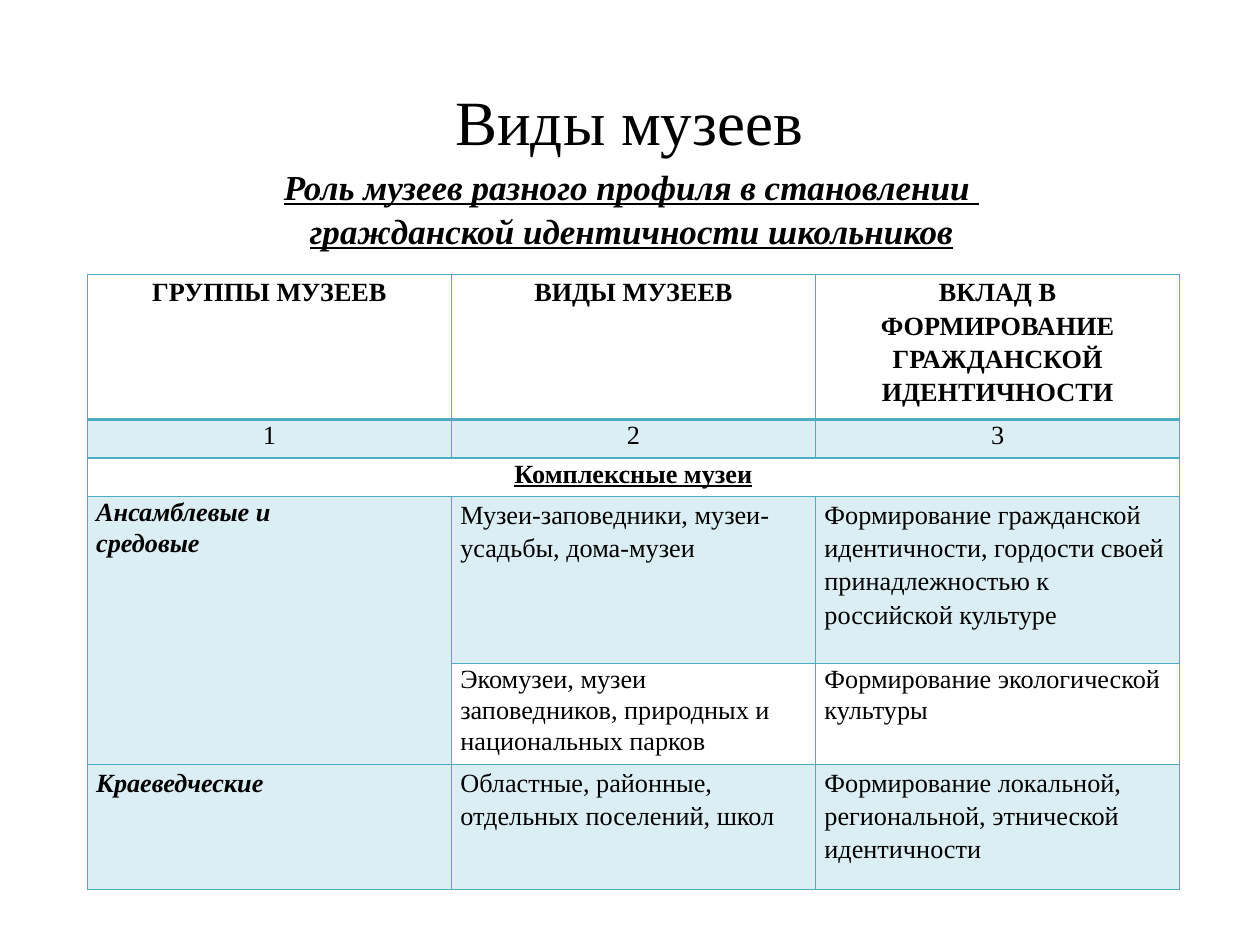
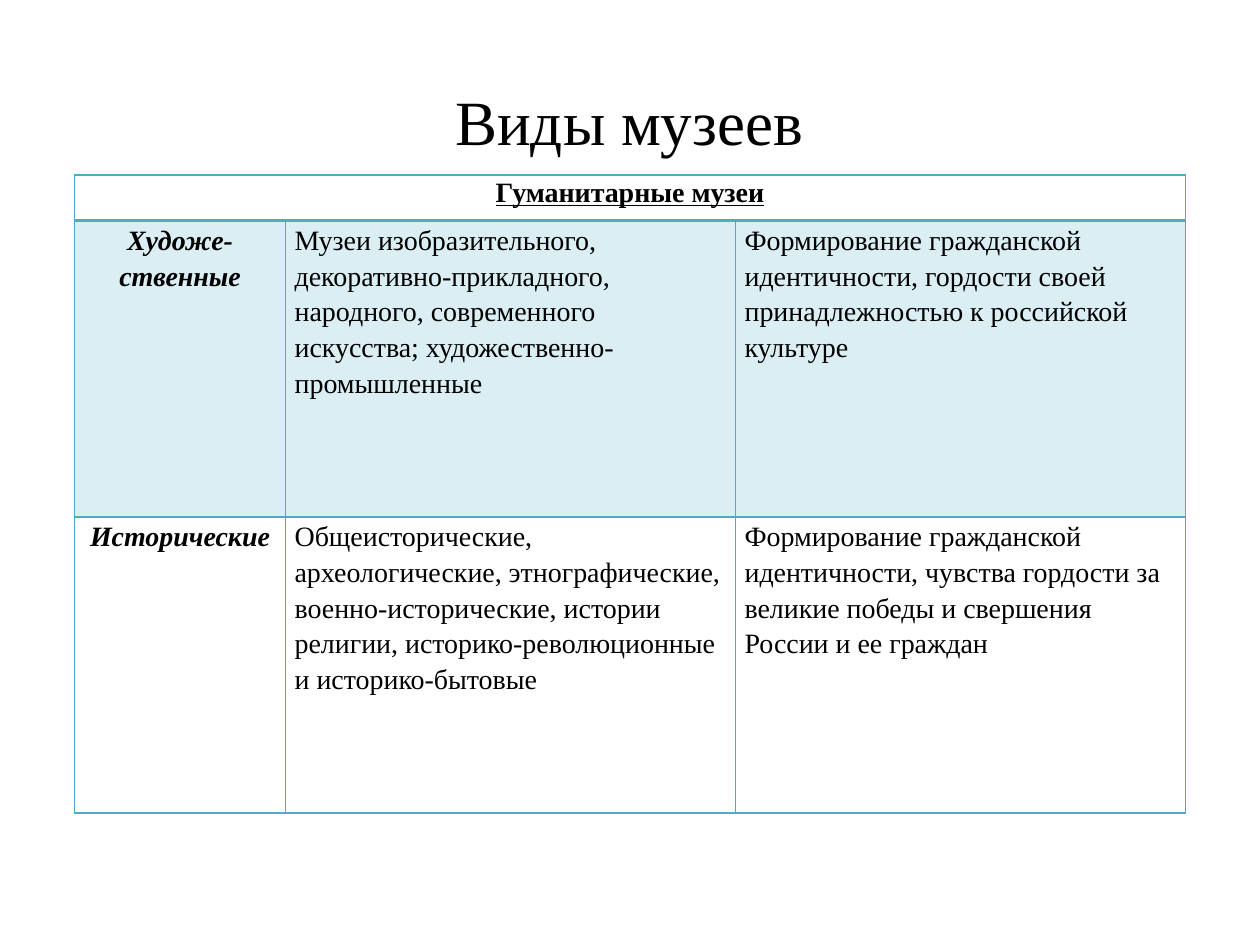
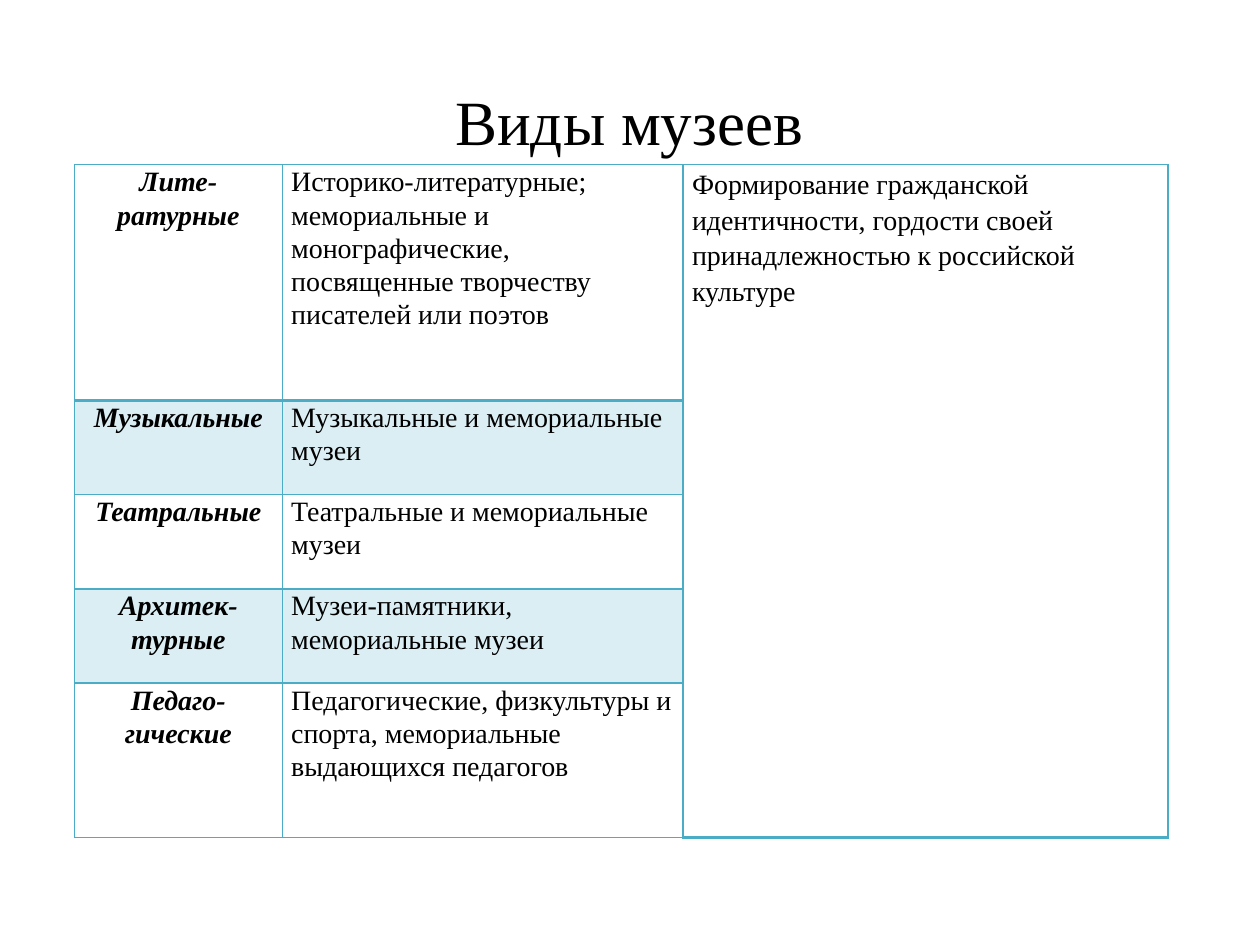
from itertools import product

from lxml import etree
from pptx import Presentation
from pptx import util as u
from pptx.dml.color import RGBColor
from pptx.enum import text
from pptx.oxml import ns

COLORS = {"ink": "000000", "grid": "4BACC6", "band": "DBEEF4"}
FONT = "Times New Roman"
ALIGN = text.PP_ALIGN
TIGHT, LOOSE = 1.07, 1.15

# Role of a cell: alignment and font attributes
ROLES = {
    "header": (ALIGN.CENTER, {"bold": True}),
    "number": (ALIGN.CENTER, {}),
    "section": (ALIGN.CENTER, {"bold": True, "underline": True}),
    "group": (ALIGN.CENTER, {"bold": True, "italic": True}),
    "group_left": (ALIGN.JUSTIFY, {"bold": True, "italic": True}),
    "body": (ALIGN.LEFT, {}),
}

PRIDE = ("Формирование гражданской идентичности, гордости своей "
         "принадлежностью к российской культуре")

# Each row: height in cm, then cells as (text, role, line spacing);
# None stands for a cell covered by a merged neighbour.
SLIDES = [
    {
        "subtitle": "Роль музеев разного профиля в становлении \n"
                    "гражданской идентичности школьников",
        "left": 1.76, "top": 5.53, "columns": [7.34, 7.34, 7.34], "size": 15,
        "merges": [(2, 0, 2, 2), (3, 0, 4, 0)],
        "rows": [
            (2.92, [("ГРУППЫ МУЗЕЕВ", "header", LOOSE),
                    ("ВИДЫ МУЗЕЕВ", "header", LOOSE),
                    ("ВКЛАД В ФОРМИРОВАНИЕ ГРАЖДАНСКОЙ ИДЕНТИЧНОСТИ", "header", LOOSE)]),
            (0.78, [(number, "number", TIGHT) for number in "123"]),
            (0.78, [("Комплексные музеи", "section", TIGHT), None, None]),
            (3.36, [("Ансамблевые и\nсредовые", "group_left", TIGHT),
                    ("Музеи-заповедники, музеи-усадьбы, дома-музеи", "body", LOOSE),
                    (PRIDE, "body", LOOSE)]),
            (2.03, [None,
                    ("Экомузеи, музеи заповедников, природных и национальных парков",
                     "body", TIGHT),
                    ("Формирование экологической культуры", "body", TIGHT)]),
            (2.52, [("Краеведческие", "group_left", LOOSE),
                    ("Областные, районные, отдельных поселений, школ", "body", LOOSE),
                    ("Формирование локальной, региональной, этнической идентичности",
                     "body", LOOSE)]),
        ],
    },
    {
        "left": 1.5, "top": 3.53, "columns": [4.26, 9.07, 9.07], "size": 16,
        "merges": [(0, 0, 0, 2)],
        "rows": [
            (0.92, [("Гуманитарные музеи", "section", TIGHT), None, None]),
            (5.97, [("Художе-ственные", "group", LOOSE),
                    ("Музеи изобразительного, декоративно-прикладного, народного, "
                     "современного искусства; художественно-промышленные", "body", LOOSE),
                    (PRIDE, "body", LOOSE)]),
            (5.97, [("Исторические", "group", LOOSE),
                    ("Общеисторические, археологические, этнографические, "
                     "военно-исторические, истории религии, историко-революционные "
                     "и историко-бытовые", "body", LOOSE),
                    ("Формирование гражданской идентичности, чувства гордости за "
                     "великие победы и свершения России и ее граждан", "body", LOOSE)]),
        ],
    },
    {
        "left": 1.5, "top": 3.32, "columns": [4.19, 8.08, 9.78], "size": 16,
        "merges": [(0, 2, 4, 2)],
        "rows": [
            (4.75, [("Лите-ратурные", "group", TIGHT),
                    ("Историко-литературные; мемориальные и монографические, "
                     "посвященные творчеству писателей или поэтов", "body", TIGHT),
                    (PRIDE, "body", LOOSE)]),
            (1.9, [("Музыкальные", "group", TIGHT),
                   ("Музыкальные и мемориальные музеи", "body", TIGHT), None]),
            (1.9, [("Театральные", "group", TIGHT),
                   ("Театральные и мемориальные музеи", "body", TIGHT), None]),
            (1.9, [("Архитек-турные", "group", TIGHT),
                   ("Музеи-памятники, мемориальные музеи", "body", TIGHT), None]),
            (2.88, [("Педаго-гические", "group", TIGHT),
                    ("Педагогические, физкультуры и спорта, мемориальные "
                     "выдающихся педагогов", "body", TIGHT), None]),
        ],
    },
]


def write(frame, words, size, align, spacing, **font):
    """Fill a text frame, one paragraph per line of words."""
    frame.word_wrap = True
    frame.text = words
    for paragraph in frame.paragraphs:
        paragraph.alignment = align
        paragraph.line_spacing = spacing
        for run in paragraph.runs:
            run.font.color.rgb = RGBColor.from_string(COLORS["ink"])
            for key, value in {"name": FONT, "size": u.Pt(size), **font}.items():
                setattr(run.font, key, value)


def draw_borders(cell, widths):
    for side, width in widths.items():
        line = etree.SubElement(cell._tc.get_or_add_tcPr(), ns.qn(f"a:ln{side}"),
                                w=str(u.Pt(width)))
        fill = etree.SubElement(line, ns.qn("a:solidFill"))
        etree.SubElement(fill, ns.qn("a:srgbClr"), val=COLORS["grid"])


deck = Presentation()
deck.slide_width, deck.slide_height = u.Cm(25.4), u.Cm(19.05)

for content in SLIDES:
    slide = deck.slides.add_slide(deck.slide_layouts[6])

    title = slide.shapes.add_textbox(u.Cm(1.09), u.Cm(1.4), u.Cm(23.19), u.Cm(2.77))
    title.text_frame.margin_top = u.Cm(0.26)
    write(title.text_frame, "Виды музеев", 36, ALIGN.CENTER, 1.0)

    if "subtitle" in content:
        subtitle = slide.shapes.add_textbox(u.Cm(1.73), u.Cm(3.18), u.Cm(22), u.Cm(1.96))
        write(subtitle.text_frame, content["subtitle"], 20, ALIGN.CENTER, 1.04,
              bold=True, italic=True, underline=True)

    columns, rows = content["columns"], content["rows"]
    museums = slide.shapes.add_table(
        len(rows), len(columns), u.Cm(content["left"]), u.Cm(content["top"]),
        u.Cm(sum(columns)), u.Cm(sum(height for height, _ in rows))).table
    museums.first_row = museums.horz_banding = False
    for column, width in zip(museums.columns, columns):
        column.width = u.Cm(width)
    for row, (height, _) in zip(museums.rows, rows):
        row.height = u.Cm(height)
    for top, left, bottom, right in content["merges"]:
        museums.cell(top, left).merge(museums.cell(bottom, right))

    for r, c in product(range(len(rows)), range(len(columns))):
        cell = museums.cell(r, c)
        if cell.is_spanned:
            cell.fill.background()
            continue
        draw_borders(cell, {"L": 1, "R": 1, "T": 2 if r == 1 else 1,
                            "B": 2 if r == 0 else 1})
        if r % 2:
            cell.fill.solid()
            cell.fill.fore_color.rgb = RGBColor.from_string(COLORS["band"])
        else:
            cell.fill.background()
        cell.margin_left = cell.margin_right = u.Cm(0.18)
        cell.margin_top = cell.margin_bottom = 0
        words, role, spacing = rows[r][1][c]
        align, font = ROLES[role]
        write(cell.text_frame, words, content["size"], align, spacing, **font)

deck.save("out.pptx")
